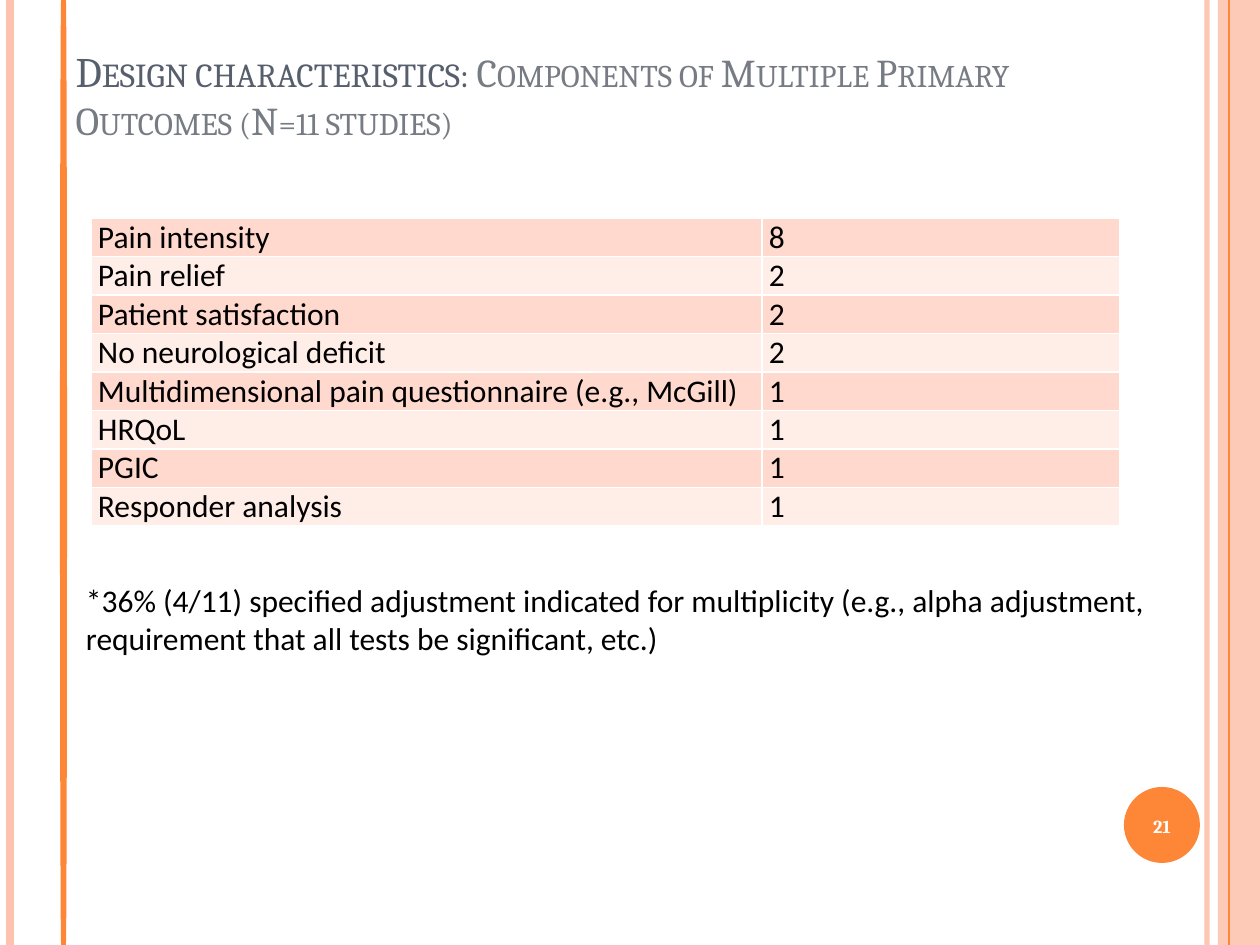
from lxml.etree import SubElement
from pptx import Presentation
from pptx.dml.color import RGBColor
from pptx.enum.shapes import MSO_CONNECTOR, MSO_SHAPE
from pptx.enum.text import MSO_ANCHOR, MSO_AUTO_SIZE, PP_ALIGN
from pptx.oxml.ns import qn
from pptx.util import Pt

PX = 7257
WIDTH, HEIGHT = 1260, 945
COLORS = {
    "orange": "FE8637", "peach": "FEC3AE", "white": "FFFFFF", "black": "000000",
    "heading": "575F6D", "subheading": "777C84", "band": "FFD9CE", "pale": "FFEDE8",
}
OUTCOMES = [
    ("Pain intensity", "8"),
    ("Pain relief", "2"),
    ("Patient satisfaction", "2"),
    ("No neurological deficit", "2"),
    ("Multidimensional pain questionnaire (e.g., McGill)", "1"),
    ("HRQoL", "1"),
    ("PGIC", "1"),
    ("Responder analysis", "1"),
]


def px(*lengths):
    return [length * PX for length in lengths]


def rgb(name):
    return RGBColor.from_string(COLORS[name])


def add_run(paragraph, text, size, font, color, bold=False):
    run = paragraph.add_run()
    run.text = text
    run.font.size, run.font.name, run.font.bold = Pt(size), font, bold
    run.font.color.rgb = rgb(color)
    return run


def set_alpha(properties, percent):
    for color in properties.iter(qn("a:srgbClr")):
        SubElement(color, qn("a:alpha"), val=str(percent * 1000))


def add_stripe(slide, x, color, width, alpha=100):
    line = slide.shapes.add_connector(MSO_CONNECTOR.STRAIGHT, *px(x, 0, x, HEIGHT))
    line.line.color.rgb, line.line.width = rgb(color), Pt(width)
    properties = line._element.spPr
    set_alpha(properties, alpha)
    SubElement(properties, qn("a:effectLst"))


def add_block(slide, kind, box, color, alpha=100):
    shape = slide.shapes.add_shape(kind, *px(*box))
    shape.shadow.inherit = False
    shape.fill.solid()
    shape.fill.fore_color.rgb = rgb(color)
    shape.line.fill.background()
    set_alpha(shape._element.spPr, alpha)


def add_frame(slide):
    add_stripe(slide, 1207, "peach", 3, 93)
    add_stripe(slide, 10, "peach", 4.5)
    add_stripe(slide, 1229, "orange", 1.5)
    add_block(slide, MSO_SHAPE.RECTANGLE, (1218, 0, 42, HEIGHT), "peach", 87)
    add_stripe(slide, 1229, "orange", 0.75)
    add_block(slide, MSO_SHAPE.OVAL, (1124, 787, 76, 76), "orange")
    add_block(slide, MSO_SHAPE.FLOWCHART_TERMINATOR, (60, 0, 7, HEIGHT), "orange")


def add_title(slide, box):
    title = slide.shapes.title
    title.left, title.top, title.width, title.height = px(*box)
    frame = title.text_frame
    frame.word_wrap, frame.auto_size = True, MSO_AUTO_SIZE.NONE
    frame.vertical_anchor = MSO_ANCHOR.BOTTOM
    frame.margin_bottom = 52 * PX
    paragraph = frame.paragraphs[0]
    paragraph.alignment = PP_ALIGN.LEFT
    paragraph.line_spacing = 1.0
    for text, size, color in (
        ("Design characteristics: ", 24, "heading"),
        ("Components of Multiple Primary Outcomes (N=11 studies)", 22.5, "subheading"),
    ):
        run = add_run(paragraph, text, size, "Cambria", color)
        run.font._element.set("cap", "small")


def add_borders(cell):
    properties = cell._tc.get_or_add_tcPr()
    for index, side in enumerate(("lnL", "lnR", "lnT", "lnB")):
        border = properties.makeelement(qn("a:" + side), {"w": str(Pt(1))})
        fill = SubElement(border, qn("a:solidFill"))
        SubElement(fill, qn("a:srgbClr"), val=COLORS["white"])
        properties.insert(index, border)


def add_outcome_table(slide, box):
    table = slide.shapes.add_table(len(OUTCOMES), 2, *px(*box)).table
    table.first_row = table.horz_banding = False
    table.columns[0].width, table.columns[1].width = px(671, box[2] - 671)
    for row_index, values in enumerate(OUTCOMES):
        for column_index, value in enumerate(values):
            cell = table.cell(row_index, column_index)
            cell.margin_left = cell.margin_right = 7 * PX
            cell.margin_top = cell.margin_bottom = 0
            cell.fill.solid()
            cell.fill.fore_color.rgb = rgb("pale" if row_index % 2 else "band")
            add_borders(cell)
            add_run(cell.text_frame.paragraphs[0], value, 18, "Calibri", "black")


def add_text(slide, box, text, size, font, color, bold=False, align=PP_ALIGN.LEFT):
    frame = slide.shapes.add_textbox(*px(*box)).text_frame
    frame.word_wrap = True
    frame.vertical_anchor = MSO_ANCHOR.MIDDLE
    frame.margin_left = frame.margin_right = 9 * PX
    frame.margin_top = frame.margin_bottom = 5 * PX
    paragraph = frame.paragraphs[0]
    paragraph.alignment = align
    add_run(paragraph, text, size, font, color, bold)


def main():
    presentation = Presentation()
    presentation.slide_width, presentation.slide_height = px(WIDTH, HEIGHT)
    slide = presentation.slides.add_slide(presentation.slide_layouts[5])
    add_frame(slide)
    add_title(slide, (63, 38, 1029, 157))
    add_outcome_table(slide, (91, 218, 1029, 304))
    add_text(slide, (1120, 790, 84, 72), "21", 10.5, "Cambria", "white", True, PP_ALIGN.CENTER)
    add_text(
        slide, (77, 576, 1183, 86),
        "*36% (4/11) specified adjustment indicated for multiplicity (e.g., alpha adjustment, "
        "requirement that all tests be significant, etc.)",
        18, "Calibri", "black",
    )
    presentation.save("out.pptx")


if __name__ == "__main__":
    main()
